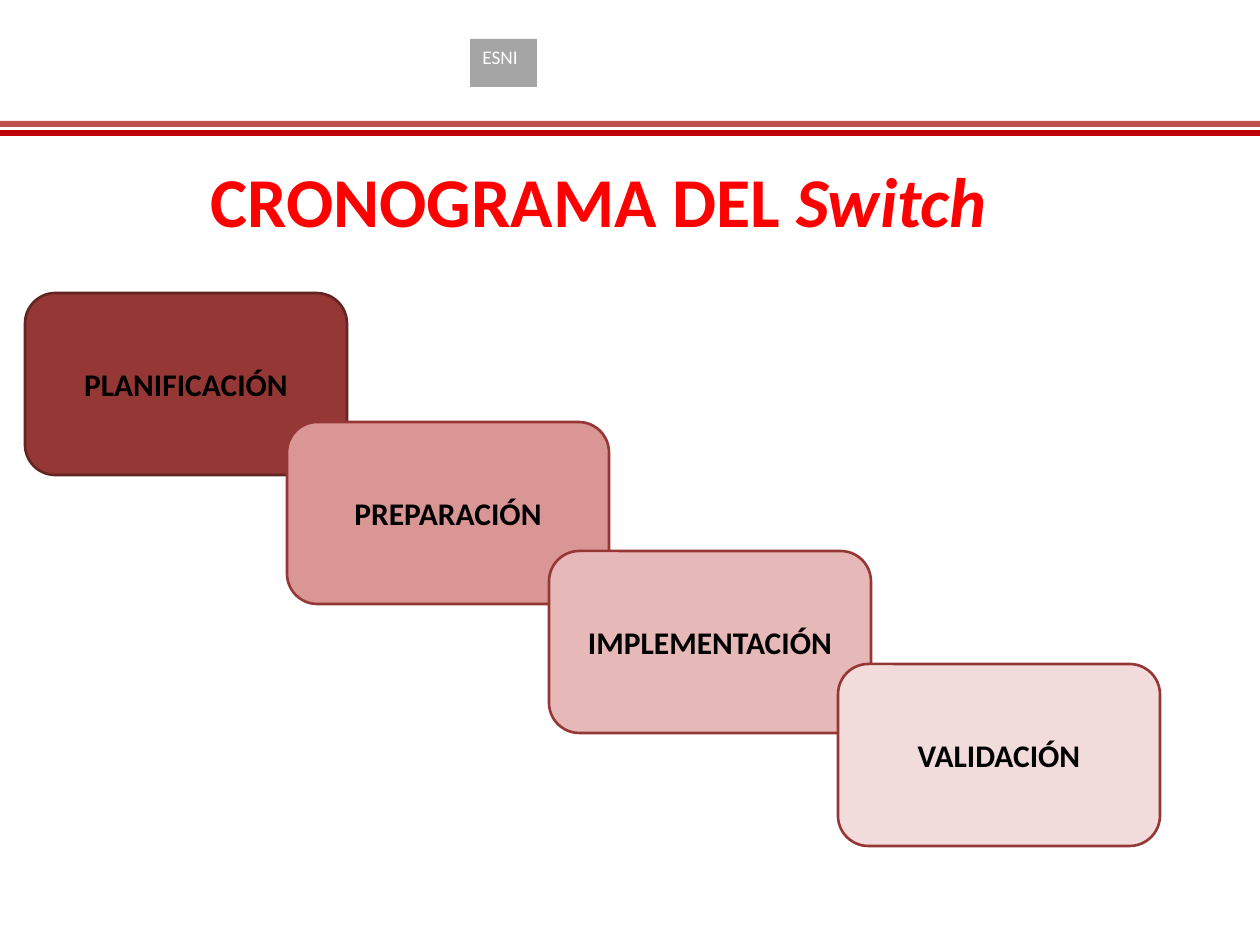
"""Build the schedule slide with its staircase of four stages."""
from dataclasses import dataclass
from typing import Optional

from pptx import Presentation
from pptx import util as u
from pptx.dml.color import RGBColor
from pptx.enum import shapes, text

PX = u.Inches(1) / 126
FONT = "Calibri"
WHITE = RGBColor(0xFF, 0xFF, 0xFF)
BLACK = RGBColor(0x00, 0x00, 0x00)
RED = RGBColor(0xFF, 0x00, 0x00)
GREY = RGBColor(0xA5, 0xA5, 0xA5)
BRICK = RGBColor(0xC0, 0x50, 0x4D)
CRIMSON = RGBColor(0xC0, 0x00, 0x00)
MAROON = RGBColor(0x95, 0x37, 0x35)
DARK_MAROON = RGBColor(0x63, 0x25, 0x23)
ROSE = RGBColor(0xD9, 0x96, 0x94)
PINK = RGBColor(0xE6, 0xB9, 0xB8)
PALE_PINK = RGBColor(0xF2, 0xDC, 0xDB)

SLIDE_WIDTH, SLIDE_HEIGHT = 1260, 945
STAGE_WIDTH, STAGE_HEIGHT = 322, 182


@dataclass(frozen=True)
class Box:
    left: int
    top: int
    width: int
    height: int


@dataclass(frozen=True)
class Stage:
    label: str
    left: int
    top: int
    fill: RGBColor
    line: RGBColor = MAROON


BANDS = [(Box(0, 121, SLIDE_WIDTH, 6), BRICK), (Box(0, 130, SLIDE_WIDTH, 6), CRIMSON)]
STAGES = [
    Stage("PLANIFICACIÓN", 25, 293, MAROON, DARK_MAROON),
    Stage("PREPARACIÓN", 287, 422, ROSE),
    Stage("IMPLEMENTACIÓN", 549, 551, PINK),
    Stage("VALIDACIÓN", 838, 664, PALE_PINK),
]


def px(length: int) -> u.Emu:
    """Turn pixels into EMU."""
    return u.Emu(round(length * PX))


def place(shape, box: Box) -> None:
    """Move and size a shape."""
    shape.left, shape.top = px(box.left), px(box.top)
    shape.width, shape.height = px(box.width), px(box.height)


def style_runs(paragraph, size: int, color: RGBColor, bold: bool) -> None:
    """Format every run of a paragraph."""
    for run in paragraph.runs:
        run.font.name = FONT
        run.font.size = u.Pt(size)
        run.font.bold = bold
        run.font.color.rgb = color


def add_block(slide, kind, box: Box, fill: RGBColor, line: Optional[RGBColor] = None):
    """Add a flat filled shape, outlined when a line colour is given."""
    shape = slide.shapes.add_shape(
        kind, px(box.left), px(box.top), px(box.width), px(box.height))
    shape.shadow.inherit = False
    shape.fill.solid()
    shape.fill.fore_color.rgb = fill
    if line is None:
        shape.line.fill.background()
    else:
        shape.line.color.rgb = line
        shape.line.width = u.Pt(1.5)
    return shape


def add_tag(slide) -> None:
    """Add the grey header tag."""
    shape = add_block(slide, shapes.MSO_SHAPE.RECTANGLE, Box(470, 39, 67, 48), GREY)
    shape.text_frame.text = "ESNI"
    shape.text_frame.vertical_anchor = text.MSO_ANCHOR.TOP
    paragraph = shape.text_frame.paragraphs[0]
    paragraph.alignment = text.PP_ALIGN.LEFT
    paragraph.space_after = u.Pt(10)
    style_runs(paragraph, 11, WHITE, False)


def set_title(slide) -> None:
    """Write and format the title placeholder."""
    title = slide.shapes.title
    place(title, Box(198, 161, 822, 95))
    frame = title.text_frame
    frame.text = "CRONOGRAMA DEL "
    frame.auto_size = text.MSO_AUTO_SIZE.NONE
    frame.vertical_anchor = text.MSO_ANCHOR.TOP
    paragraph = frame.paragraphs[0]
    paragraph.alignment = text.PP_ALIGN.LEFT
    paragraph.line_spacing = 0.9
    emphasis = paragraph.add_run()
    emphasis.text = "Switch"
    emphasis.font.italic = True
    style_runs(paragraph, 40, RED, True)


def add_stage(slide, stage: Stage) -> None:
    """Add one rounded step of the staircase."""
    box = Box(stage.left, stage.top, STAGE_WIDTH, STAGE_HEIGHT)
    shape = add_block(
        slide, shapes.MSO_SHAPE.ROUNDED_RECTANGLE, box, stage.fill, stage.line)
    shape.text_frame.text = stage.label
    shape.text_frame.vertical_anchor = text.MSO_ANCHOR.MIDDLE
    paragraph = shape.text_frame.paragraphs[0]
    paragraph.alignment = text.PP_ALIGN.CENTER
    style_runs(paragraph, 18, BLACK, True)


def main() -> None:
    """Assemble and save the slide."""
    presentation = Presentation()
    presentation.slide_width = px(SLIDE_WIDTH)
    presentation.slide_height = px(SLIDE_HEIGHT)
    slide = presentation.slides.add_slide(
        presentation.slide_layouts.get_by_name("Title Only"))
    set_title(slide)
    add_tag(slide)
    for box, color in BANDS:
        add_block(slide, shapes.MSO_SHAPE.RECTANGLE, box, color)
    for stage in STAGES:
        add_stage(slide, stage)
    presentation.save("out.pptx")


if __name__ == "__main__":
    main()
